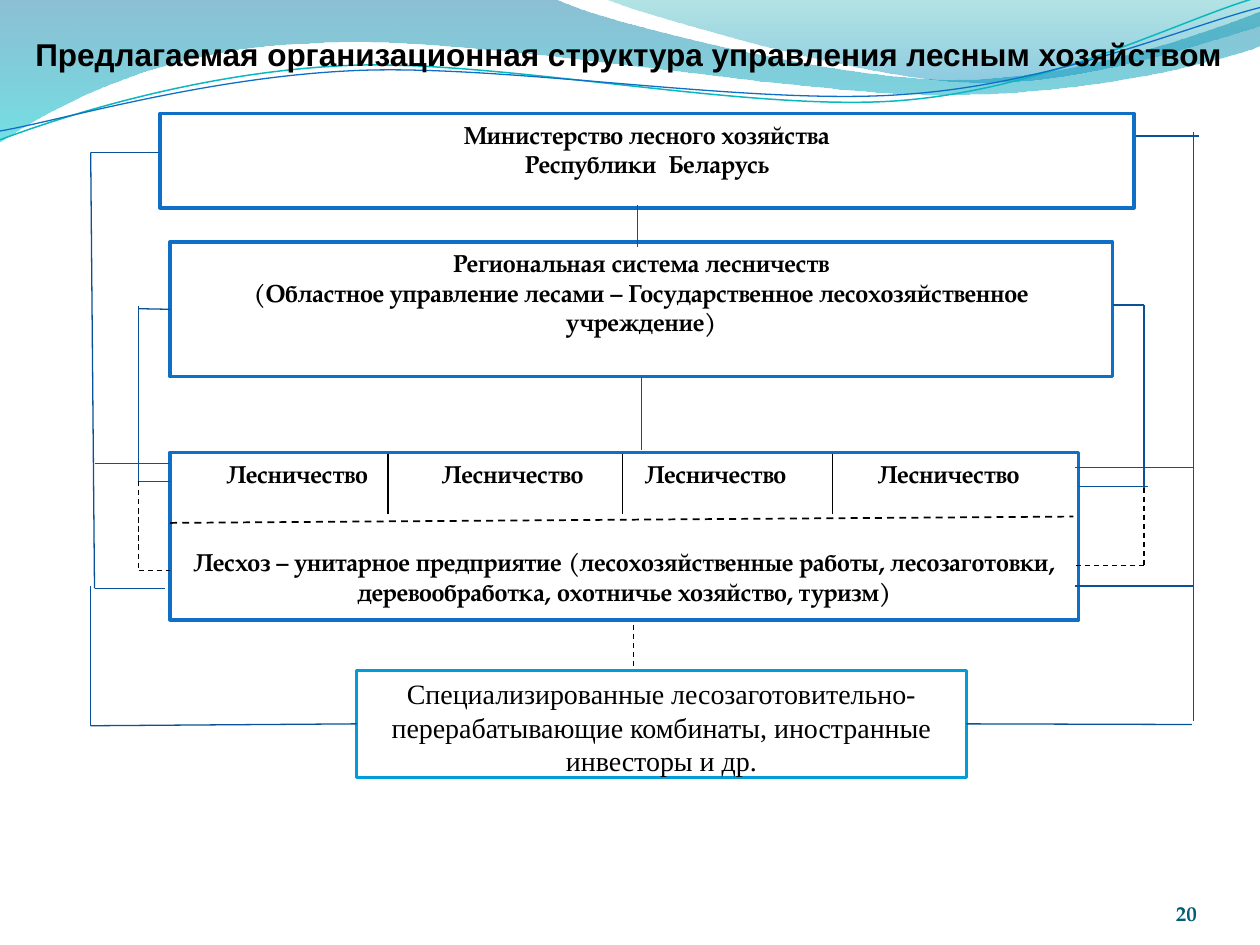
from lxml import etree
from pptx import Presentation
from pptx.dml.color import RGBColor
from pptx.enum import dml, shapes, text
from pptx.oxml import ns
from pptx.util import Inches, Pt

COLORS = {
    "black": "000000", "white": "FFFFFF", "blue": "0F6FC6", "sky": "009DD9",
    "link": "095295", "number": "045D75", "teal": "0AB8BF",
    "deep": "0074A1", "aqua": "00C6CF", "sea": "00A1A9", "azure": "008BBF",
}
SERIF = "TeX Gyre Pagella"
TOP, LEFT, BOTTOM, RIGHT = range(4)


def rgb(name):
    return RGBColor.from_string(COLORS[name])


def write(tf, lines, size=14, font=SERIF, color="black", bold=True,
          align=text.PP_ALIGN.CENTER, anchor=text.MSO_ANCHOR.TOP):
    tf.word_wrap = True
    tf.auto_size = text.MSO_AUTO_SIZE.NONE
    tf.vertical_anchor = anchor
    for i, line in enumerate(lines):
        p = tf.add_paragraph() if i else tf.paragraphs[0]
        p.alignment = align
        r = p.add_run()
        r.text = line
        r.font.size, r.font.name, r.font.bold = Pt(size), font, bold
        r.font.color.rgb = rgb(color)


def zero_margins(tf, top=0):
    tf.margin_left = tf.margin_right = tf.margin_bottom = 0
    tf.margin_top = Inches(top)


def outline(s, left, top, start, segments, close):
    """Freeform whose segments are lines (x, y) or cubics (x1, y1, x2, y2, x3, y3)."""
    flat = [v for seg in (start, *segments) for v in seg]
    pts = [(Inches(left + x), Inches(top + y)) for x, y in zip(flat[::2], flat[1::2])]
    builder = s.shapes.build_freeform(*pts[0])
    builder.add_line_segments(pts[1:], close=close)
    sp = builder.convert_to_shape()
    sp.shadow.inherit = False
    steps = iter(list(sp._element.spPr.iter(ns.qn("a:lnTo"))))
    for seg in segments:
        step = next(steps)
        if len(seg) == 6:
            curve = etree.Element(ns.qn("a:cubicBezTo"))
            step.addprevious(curve)
            for part in (step, next(steps), next(steps)):
                curve.append(part[0])
                part.getparent().remove(part)
    return sp


def band(s, left, top, start, segments, stops):
    """Closed area with a vertical gradient; stops are (colour, opacity %)."""
    sp = outline(s, left, top, start, segments, True)
    sp.line.fill.background()
    sp.fill.gradient()
    sp.fill.gradient_angle = 270
    for stop, (color, _) in zip(sp.fill.gradient_stops, stops):
        stop.color.rgb = rgb(color)
    for clr, (_, opacity) in zip(sp._element.spPr.iter(ns.qn("a:srgbClr")), stops):
        etree.SubElement(clr, ns.qn("a:alpha"), val=str(opacity * 1000))


def wave(s, left, top, start, segments, color, width):
    sp = outline(s, left, top, start, segments, False)
    sp.fill.background()
    sp.line.color.rgb = rgb(color)
    sp.line.width = Pt(width)


def header_waves(s, left, top):
    band(s, left, top, (0, 0), [
        (4.4, -0.01), (4.76, 0.17, 6.64, 0.63, 7.58, 0.63),
        (8.53, 0.63, 9.58, 0.26, 10, 0.09), (10.01, 0.36),
        (9.83, 0.44, 8.7, 0.76, 7.46, 0.75), (6.22, 0.75, 3.82, 0.28, 2.57, 0.34),
        (1.29, 0.36, 0.46, 0.83, -0.01, 1.13)], [("deep", 45), ("aqua", 55)])
    band(s, left, top, (4.79, -0.01), [
        (5.09, 0.11, 6.82, 0.62, 7.69, 0.65), (8.56, 0.69, 9.61, 0.32, 10, 0.21),
        (10, 0)], [("sea", 30), ("azure", 45)])
    wave(s, left, top, (0, 1.11), [
        (0.48, 0.93, 1.58, 0.57, 2.77, 0.52), (3.95, 0.47, 5.93, 0.89, 7.13, 0.8),
        (8.33, 0.71, 9.38, 0.15, 9.98, -0.02)], "teal", 0.85)
    wave(s, left, top, (0, 1.04), [
        (0.47, 0.96, 1.64, 0.61, 2.83, 0.56), (4.03, 0.51, 5.97, 0.84, 7.17, 0.75),
        (8.36, 0.67, 9.41, 0.21, 10, 0.06)], "blue", 0.75)


def title(s, left, top, width, height):
    sp = s.shapes.title
    s.shapes._spTree.append(sp._element)  # in front of the waves
    sp.left, sp.top, sp.width, sp.height = map(Inches, (left, top, width, height))
    zero_margins(sp.text_frame, top=0.05)
    write(sp.text_frame,
          ["Предлагаемая организационная структура управления лесным хозяйством"],
          size=18, font="Arial", align=text.PP_ALIGN.LEFT)


def block(s, left, top, width, height, lines, line="blue", **fmt):
    sp = s.shapes.add_shape(shapes.MSO_SHAPE.RECTANGLE,
                            *map(Inches, (left, top, width, height)))
    sp.shadow.inherit = False
    sp.fill.solid()
    sp.fill.fore_color.rgb = rgb("white")
    sp.line.color.rgb = rgb(line)
    sp.line.width = Pt(2)
    write(sp.text_frame, lines, **fmt)
    return sp


def route(s, left, top, points, color="link", width=0.75, dashed=False,
          begin=None, end=None):
    """Straight connectors through the points; begin and end are (shape, site)."""
    parts = []
    for (x1, y1), (x2, y2) in zip(points, points[1:]):
        c = s.shapes.add_connector(
            shapes.MSO_CONNECTOR.STRAIGHT,
            *map(Inches, (left + x1, top + y1, left + x2, top + y2)))
        c.line.color.rgb = rgb(color)
        c.line.width = Pt(width)
        if dashed:
            c.line.dash_style = dml.MSO_LINE.DASH
        etree.SubElement(c._element.spPr, ns.qn("a:effectLst"))
        parts.append(c)
    if begin:
        parts[0].begin_connect(*begin)
    if end:
        parts[-1].end_connect(*end)


def forestry_block(s, left, top, width, height):
    sp = block(s, left, top, width, height, [
        "\tЛесничество" * 4,
        "Лесхоз – унитарное предприятие (лесохозяйственные работы, лесозаготовки, "
        "деревообработка, охотничье хозяйство, туризм)"])
    units, enterprise = sp.text_frame.paragraphs
    units.alignment = text.PP_ALIGN.LEFT
    tabs = etree.SubElement(units._p.get_or_add_pPr(), ns.qn("a:tabLst"))
    for x in (0.91, 2.62, 4.23, 6.08):
        etree.SubElement(tabs, ns.qn("a:tab"), pos=str(Inches(x)), algn="ctr")
    enterprise.space_before = Pt(34)
    route(s, left, top, [(0, 0.56), (7.17, 0.51)], "black", 1, dashed=True)
    for x in (1.73, 3.59, 5.26):
        route(s, left, top, [(x, 0.01), (x, 0.49)], "black")


def structure(s, left, top):
    block(s, left + 0.55, top, 7.73, 0.75,
          ["Министерство лесного хозяйства", "Республики  Беларусь"])
    regional = block(s, left + 0.63, top + 1.02, 7.48, 1.07, [
        "Региональная система лесничеств",
        "(Областное управление лесами – Государственное лесохозяйственное учреждение)"])
    forestry_block(s, left + 0.63, top + 2.69, 7.21, 1.33)
    plants = block(s, left + 2.11, top + 4.42, 4.84, 0.85, [
        "Специализированные лесозаготовительно-перерабатывающие комбинаты, "
        "иностранные инвесторы и др."],
        line="sky", size=16, font="Times New Roman", bold=False)

    solid = [
        [(0.54, 0.31), (0, 0.31), (0.03, 3.77), (0.59, 3.77)],
        [(0.62, 2.78), (0.03, 2.78)],
        [(8.11, 1.52), (8.36, 1.52), (8.36, 2.97)],
        [(7.84, 2.96), (8.39, 2.96)],
        [(8.3, 0.18), (8.8, 0.18)],
        [(8.75, 0.15), (8.75, 3.8)],
        [(7.81, 2.81), (8.75, 2.81)],
        [(7.81, 3.75), (8.75, 3.75), (8.75, 4.82)],
        [(4.34, 0.73), (4.34, 1.06)],
        [(0.38, 1.53), (0.38, 2.92), (0.63, 2.92)],
    ]
    dashed = [
        [(0.38, 2.92), (0.38, 3.63), (0.63, 3.63)],
        [(8.36, 2.97), (8.36, 3.59), (7.81, 3.59)],
        [(4.31, 4.06), (4.31, 4.41)],
    ]
    for points in solid:
        route(s, left, top, points)
    for points in dashed:
        route(s, left, top, points, "black", dashed=True)
    route(s, left, top, [(0.63, 1.55), (0.38, 1.55)], begin=(regional, LEFT))
    route(s, left, top, [(4.37, 2.09), (4.37, 2.67)], begin=(regional, BOTTOM))
    route(s, left, top, [(0, 3.75), (0, 4.86), (2.11, 4.84)], end=(plants, LEFT))
    route(s, left, top, [(8.74, 4.85), (6.95, 4.84)], end=(plants, RIGHT))


def page_number(s, left, top, width, height):
    tf = s.shapes.add_textbox(*map(Inches, (left, top, width, height))).text_frame
    zero_margins(tf)
    write(tf, ["20"], size=12, color="number", align=text.PP_ALIGN.RIGHT,
          anchor=text.MSO_ANCHOR.BOTTOM)


def main():
    prs = Presentation()
    prs.slide_width, prs.slide_height = Inches(10), Inches(7.5)
    s = prs.slides.add_slide(prs.slide_layouts[5])
    header_waves(s, 0, 0)
    title(s, 0.28, 0.23, 9.53, 0.59)
    structure(s, 0.72, 0.9)
    page_number(s, 8.67, 6.95, 0.83, 0.4)
    prs.save("out.pptx")


if __name__ == "__main__":
    main()
